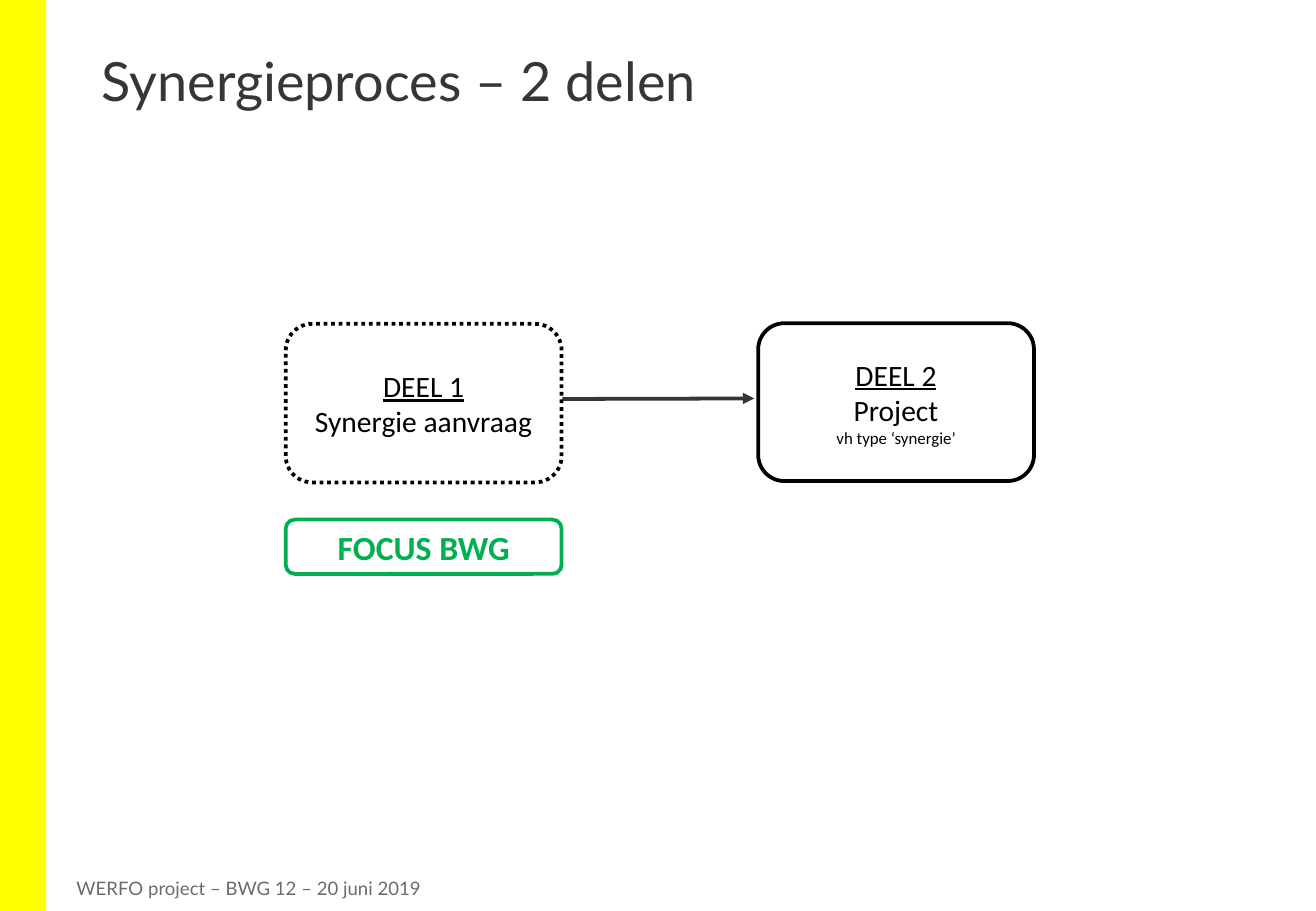
from dataclasses import dataclass

from lxml.etree import SubElement
from pptx import Presentation
from pptx.dml.color import RGBColor as RGB
from pptx.enum.dml import MSO_LINE
from pptx.enum.shapes import MSO_CONNECTOR, MSO_SHAPE
from pptx.enum.text import MSO_ANCHOR as ANCHOR, PP_ALIGN as ALIGN
from pptx.oxml.ns import qn
from pptx.util import Pt


@dataclass(frozen=True)
class Theme:
    yellow: RGB = RGB(0xFF, 0xFF, 0x00)
    dark: RGB = RGB(0x37, 0x36, 0x36)
    grey: RGB = RGB(0x6B, 0x6B, 0x6B)
    black: RGB = RGB(0x00, 0x00, 0x00)
    green: RGB = RGB(0x00, 0xB0, 0x50)
    heading_font: str = "Lato"
    box_font: str = "Calibri"
    title_size: float = 32
    footer_size: float = 11
    part_size: float = 17.5
    note_size: float = 10
    focus_size: float = 20
    stroke: float = 2.25


theme = Theme()


def write(shape, lines, font, color, sizes, align, anchor):
    frame = shape.text_frame
    frame.word_wrap = True
    frame.vertical_anchor = anchor
    frame.text = "\n".join(lines)
    for paragraph, size in zip(frame.paragraphs, sizes):
        paragraph.alignment = align
        run_font = paragraph.runs[0].font
        run_font.name, run_font.size = font, Pt(size)
        run_font.color.rgb = color
    return frame.paragraphs[0]


def add_box(left, top, height, lines, sizes, color):
    box = slide.shapes.add_shape(
        MSO_SHAPE.ROUNDED_RECTANGLE, Pt(left), Pt(top), Pt(box_width), Pt(height))
    box.shadow.inherit = False
    box.fill.background()
    box.line.color.rgb = color
    box.line.width = Pt(theme.stroke)
    first = write(box, lines, theme.box_font, color, sizes, ALIGN.CENTER, ANCHOR.MIDDLE)
    return box, first.runs[0].font


prs = Presentation()
prs.slide_width, prs.slide_height = Pt(780), Pt(540)
slide = prs.slides.add_slide(prs.slide_layouts[6])

# Yellow side band
band = slide.shapes.add_shape(MSO_SHAPE.RECTANGLE, 0, 0, Pt(27.4), prs.slide_height)
band.shadow.inherit = False
band.fill.solid()
band.fill.fore_color.rgb = theme.yellow
band.line.fill.background()

# Title and footer
title = slide.shapes.add_textbox(Pt(53.3), Pt(28.8), Pt(672.5), Pt(77.8))
heading = write(title, ["Synergieproces – 2 delen"], theme.heading_font, theme.dark,
                [theme.title_size], ALIGN.LEFT, ANCHOR.TOP)
heading.line_spacing = 0.9

footer = slide.shapes.add_textbox(Pt(38.2), Pt(519.8), Pt(478.8), Pt(13.7))
write(footer, ["WERFO project – BWG 12 – 20 juni 2019"], theme.heading_font, theme.grey,
      [theme.footer_size], ALIGN.LEFT, ANCHOR.MIDDLE)

# Arrow from part 1 to part 2
arrow = slide.shapes.add_connector(
    MSO_CONNECTOR.STRAIGHT, Pt(333.4), Pt(236.5), Pt(447.1), Pt(236.2))
arrow.line.color.rgb = theme.dark
arrow.line.width = Pt(theme.stroke)
SubElement(arrow.line._get_or_add_ln(), qn("a:tailEnd"), type="triangle")
SubElement(arrow._element.spPr, qn("a:effectLst"))

# The two parts of the process
box_width, part_1_left, part_2_left = 163.5, 169.4, 449.4
part_1, part_1_heading = add_box(
    part_1_left, 192, 94, ["DEEL 1", "Synergie aanvraag"],
    [theme.part_size] * 2, theme.black)
part_1.line.dash_style = MSO_LINE.ROUND_DOT
part_2, part_2_heading = add_box(
    part_2_left, 191.6, 93.6, ["DEEL 2", "Project", "vh type ‘synergie’"],
    [theme.part_size, theme.part_size, theme.note_size], theme.black)
for part_heading in (part_1_heading, part_2_heading):
    part_heading.underline = True

# Focus label under part 1
focus, focus_font = add_box(
    part_1_left, 308, 32.2, ["FOCUS BWG"], [theme.focus_size], theme.green)
focus_font.bold = True

prs.save("out.pptx")
